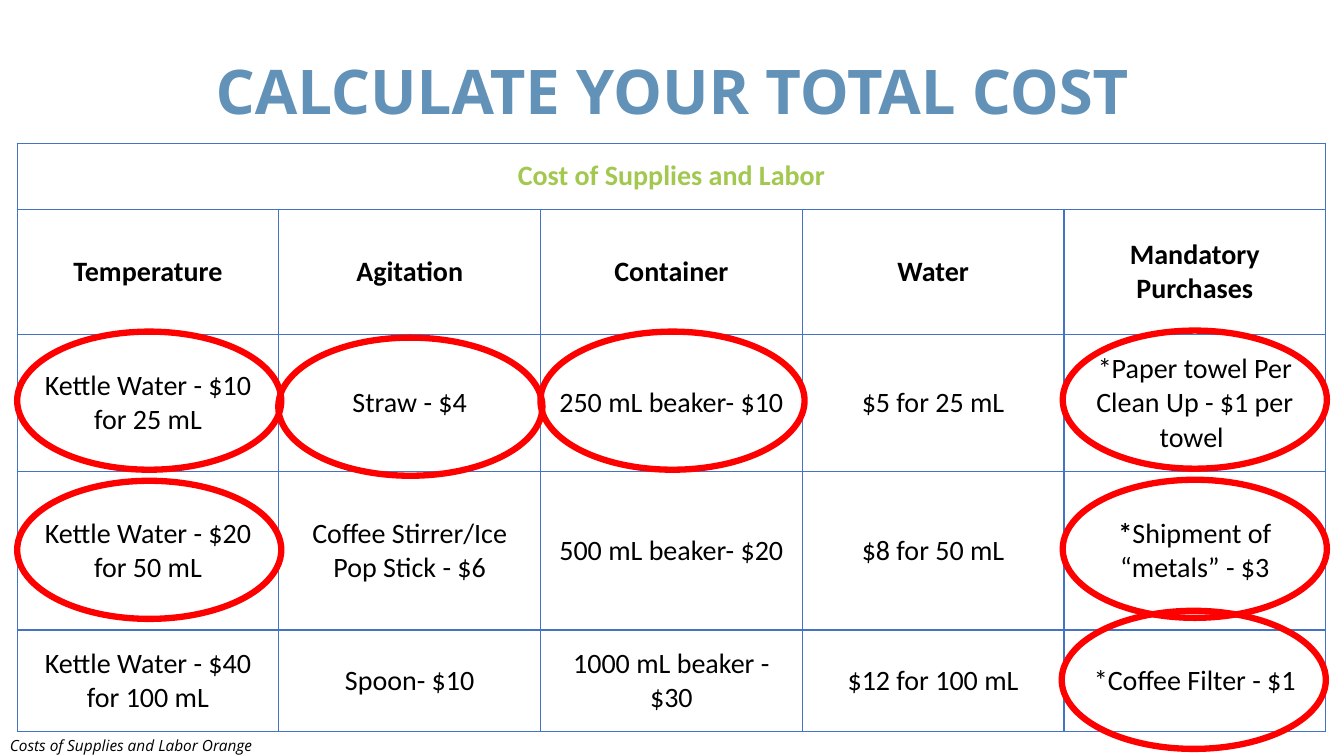
from lxml import etree
from pptx import Presentation
from pptx.dml.color import RGBColor
from pptx.enum.shapes import MSO_SHAPE
from pptx.enum.text import MSO_ANCHOR, PP_ALIGN
from pptx.oxml.ns import qn
from pptx.util import Inches, Pt

CENTER, LEFT = PP_ALIGN.CENTER, PP_ALIGN.LEFT
MIDDLE = MSO_ANCHOR.MIDDLE
OVAL, RECT = MSO_SHAPE.OVAL, MSO_SHAPE.RECTANGLE
COLORS = {
    "title": "6292B8", "heading": "A2C850", "text": "000000",
    "border": "4472C4", "circle": "FF0000", "white": "FFFFFF",
}
TABLE_TITLE = "Cost of Supplies and Labor"
# A cell given as a tuple has a bold first part.
COST_ROWS = [
    ["Temperature", "Agitation", "Container", "Water", "Mandatory Purchases"],
    ["Kettle Water - $10 for 25 mL", "Straw - $4", "250 mL beaker- $10",
     "$5 for 25 mL", "*Paper towel Per Clean Up - $1 per towel\u00a0"],
    ["Kettle Water - $20 for 50 mL", "Coffee Stirrer/Ice Pop Stick - $6",
     "500 mL beaker- $20", "$8 for 50 mL", ("*", "Shipment of “metals” - $3")],
    ["Kettle Water - $40 for 100 mL", "Spoon- $10", "1000 mL beaker - $30",
     "$12 for 100 mL", "*Coffee Filter - $1"],
]
ROW_HEIGHTS = [0.66, 1.24, 1.36, 1.57, 1.01]
TABLE_LEFT, TABLE_TOP, TABLE_WIDTH = 0.17, 1.42, 12.98
CIRCLES = [(0.17, 4.77), (0.17, 3.29), (10.53, 6.06), (10.54, 4.76),
           (2.76, 3.35), (5.36, 3.29), (10.54, 3.28)]


def rgb(name):
    return RGBColor.from_string(COLORS[name])


def style(p, size, font, color, align=CENTER, bold=None, italic=None):
    p.alignment = align
    p.font.size, p.font.name = Pt(size), font
    p.font.bold, p.font.italic = bold, italic
    p.font.color.rgb = rgb(color)


def set_borders(cell):
    tc_pr = cell._tc.get_or_add_tcPr()
    for i, side in enumerate(("a:lnL", "a:lnR", "a:lnT", "a:lnB")):
        ln = etree.Element(qn(side), w=str(Pt(1)))
        fill = etree.SubElement(ln, qn("a:solidFill"))
        etree.SubElement(fill, qn("a:srgbClr"), val=COLORS["border"])
        tc_pr.insert(i, ln)


def fill_cell(cell, content, color="text", bold=False):
    cell.vertical_anchor = MIDDLE
    cell.margin_left = cell.margin_right = Inches(0.09)
    cell.margin_top = cell.margin_bottom = Inches(0.09)
    p = cell.text_frame.paragraphs[0]
    if isinstance(content, tuple):
        for i, part in enumerate(content):
            r = p.add_run()
            r.text = part
            r.font.bold = i == 0
        bold = None
    else:
        p.text = content
    style(p, 20, "Calibri", color, bold=bold)


def add_cost_table(s):
    cols = len(COST_ROWS[0])
    table = s.shapes.add_table(
        len(ROW_HEIGHTS), cols, Inches(TABLE_LEFT), Inches(TABLE_TOP),
        Inches(TABLE_WIDTH), Inches(sum(ROW_HEIGHTS))).table
    for row, height in zip(table.rows, ROW_HEIGHTS):
        row.height = Inches(height)
    for col in table.columns:
        col.width = Inches(TABLE_WIDTH / cols)
    for cell in table.iter_cells():
        cell.fill.background()
        set_borders(cell)
    table.cell(0, 0).merge(table.cell(0, cols - 1))
    fill_cell(table.cell(0, 0), TABLE_TITLE, "heading", True)
    for i, row in enumerate(COST_ROWS, 1):
        for j, content in enumerate(row):
            fill_cell(table.cell(i, j), content, bold=i == 1)


def add_title(s, text):
    tf = s.shapes.add_textbox(
        Inches(0.92), Inches(0.21), Inches(11.5), Inches(1.45)).text_frame
    tf.word_wrap = True
    tf.vertical_anchor = MIDDLE
    p = tf.paragraphs[0]
    p.text = text
    p.line_spacing = 0.9
    style(p, 44, "Open Sans", "title", bold=True)


def add_outlined(s, kind, left, top, width, height, line, line_width):
    sp = s.shapes.add_shape(
        kind, Inches(left), Inches(top), Inches(width), Inches(height))
    sp.shadow.inherit = False
    sp.fill.background()
    sp.line.color.rgb = rgb(line)
    sp.line.width = Pt(line_width)
    return sp


def add_caption(s, text):
    sp = add_outlined(s, RECT, 0, 7.29, 4.55, 0.2, "white", 1)
    sp.fill.solid()
    sp.fill.fore_color.rgb = rgb("white")
    tf = sp.text_frame
    tf.vertical_anchor = MIDDLE
    p = tf.paragraphs[0]
    p.text = text
    style(p, 11, "Open Sans", "text", LEFT, italic=True)


def main():
    prs = Presentation()
    prs.slide_width, prs.slide_height = Inches(13.33), Inches(7.5)
    s = prs.slides.add_slide(prs.slide_layouts[6])
    add_cost_table(s)
    add_title(s, "CALCULATE YOUR TOTAL COST")
    for left, top in CIRCLES:
        add_outlined(s, OVAL, left, top, 2.62, 1.37, "circle", 4.5)
    add_caption(s, "Costs of Supplies and Labor Orange")
    prs.save("out.pptx")


if __name__ == "__main__":
    main()
